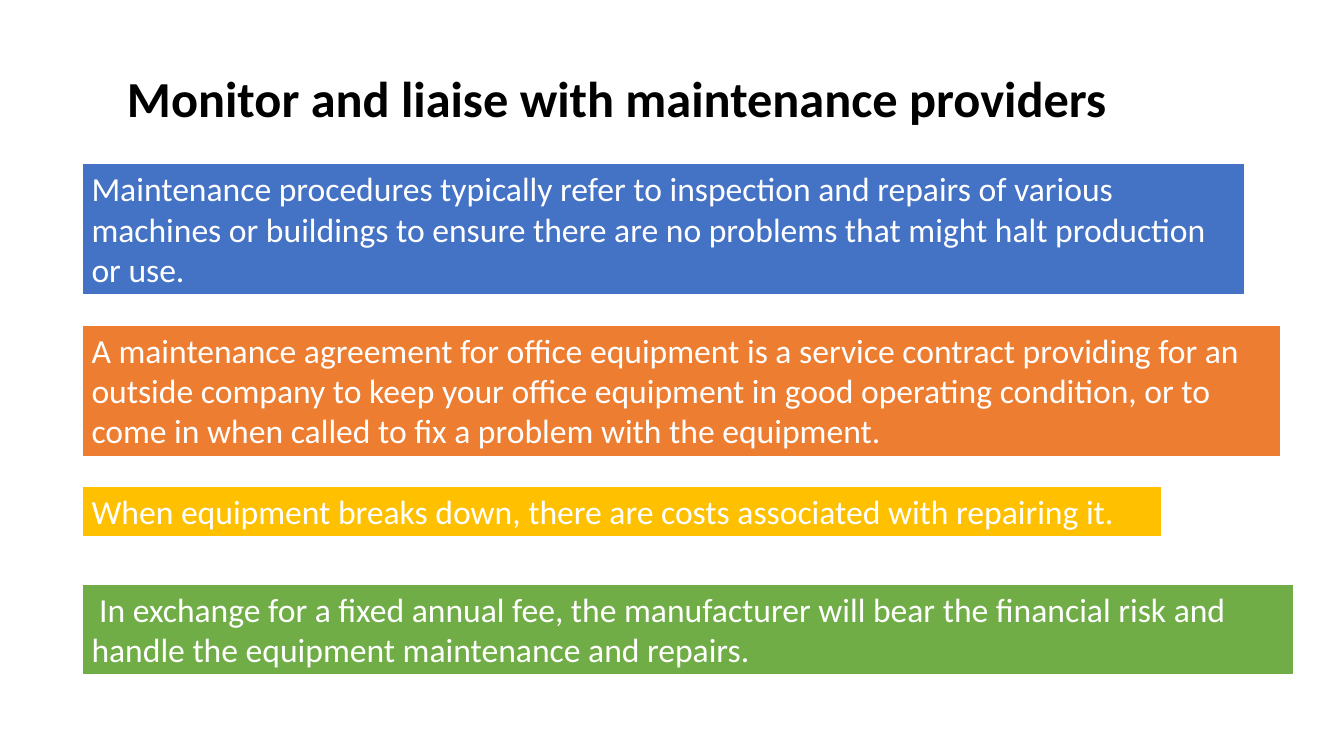
from pptx import Presentation
from pptx.dml.color import RGBColor
from pptx.enum.shapes import MSO_SHAPE
from pptx.enum.text import MSO_ANCHOR, MSO_AUTO_SIZE, PP_ALIGN
from pptx.util import Pt

TITLE = "Monitor and liaise with maintenance providers"
BARS = [
    ("Maintenance procedures typically refer to inspection and repairs of various "
     "machines or buildings to ensure there are no problems that might halt "
     "production or use.", "4472C4", 116.6, 831, 3),
    ("A maintenance agreement for office equipment is a service contract providing "
     "for an outside company to keep your office equipment in good operating "
     "condition, or to come in when called to fix a problem with the equipment.",
     "ED7D31", 231.8, 856.8, 3),
    ("When equipment breaks down, there are costs associated with repairing it.",
     "FFC000", 347, 771.8, 1),
    (" In exchange for a fixed annual fee, the manufacturer will bear the financial "
     "risk and handle the equipment maintenance and repairs.",
     "70AD47", 416.9, 866.2, 2),
]
LEFT, PAD, LINE = 58.3, 7.2, 29.1


def color(code):
    return RGBColor.from_string(code)


def place(shape, left, top, width, height):
    shape.left, shape.top = Pt(left), Pt(top)
    shape.width, shape.height = Pt(width), Pt(height)


def write(shape, text, size, code, bold=False):
    frame = shape.text_frame
    frame.text = text
    frame.word_wrap = True
    frame.auto_size = MSO_AUTO_SIZE.SHAPE_TO_FIT_TEXT
    frame.vertical_anchor = MSO_ANCHOR.TOP
    line = frame.paragraphs[0]
    line.alignment = PP_ALIGN.LEFT
    font = line.runs[0].font
    font.name, font.size, font.bold = "Calibri", Pt(size), bold
    font.color.rgb = color(code)


deck = Presentation()
deck.slide_width, deck.slide_height = Pt(960), Pt(540)
slide = deck.slides.add_slide(deck.slide_layouts[5])

title = slide.shapes.title
place(title, 83.5, 44.6, 722.2, 51.1)
write(title, TITLE, 36, "000000", True)

for text, fill, top, width, rows in BARS:
    height = rows * LINE + PAD
    bar = slide.shapes.add_shape(
        MSO_SHAPE.RECTANGLE, Pt(LEFT), Pt(top), Pt(width), Pt(height))
    bar.shadow.inherit = False
    bar.fill.solid()
    bar.fill.fore_color.rgb = color(fill)
    bar.line.color.rgb = color("FFFFFF")
    bar.line.width = Pt(1.5)
    write(bar, text, 24, "FFFFFF")

deck.save("out.pptx")
